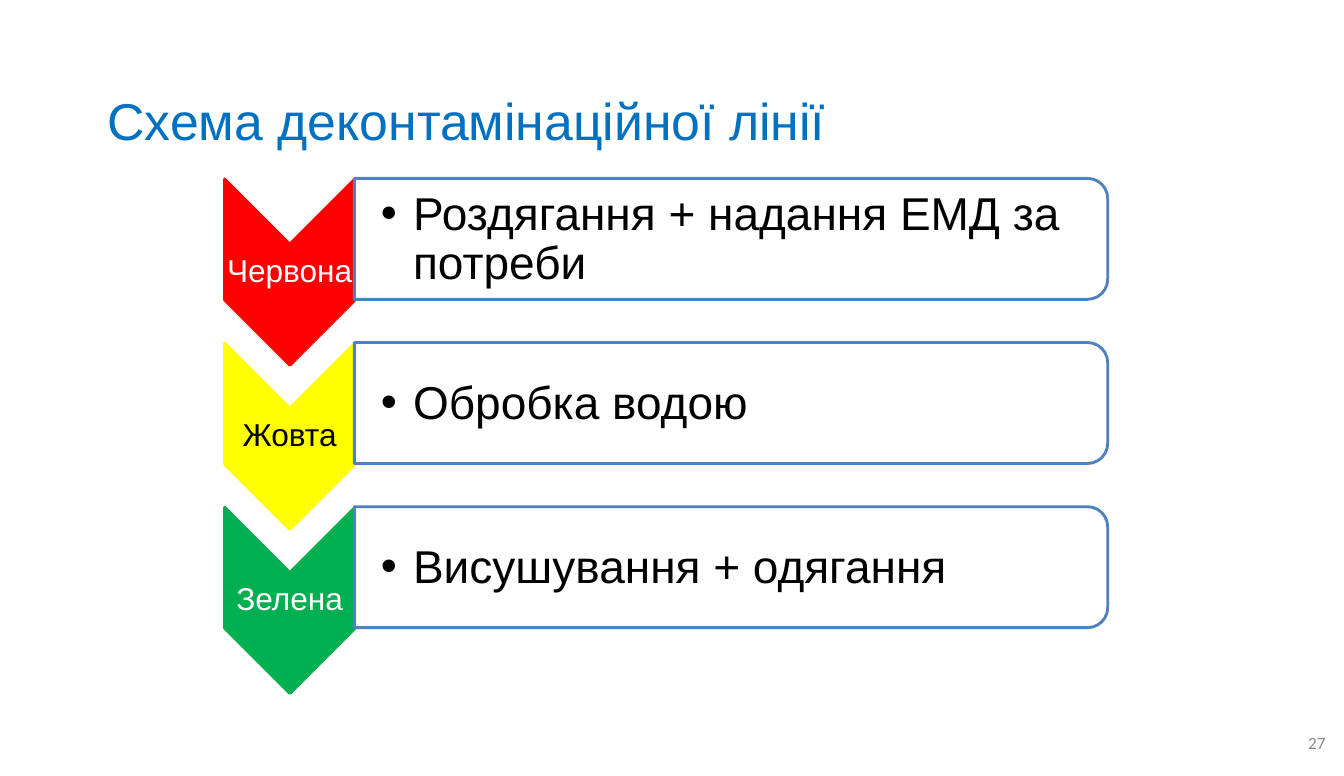
"""Build the slide on the decontamination line with its three zones."""
from typing import Any, NamedTuple

from lxml import etree
from pptx import Presentation
from pptx import util as u
from pptx.dml import color as col
from pptx.enum import shapes, text
from pptx.oxml import ns

PITCH = 4.03
BLUE, BLACK, WHITE, GREY = "4F81BD", "000000", "FFFFFF", "888888"


class Box(NamedTuple):
    left: float
    top: float
    width: float
    height: float

    def down(self, step: float) -> "Box":
        return self._replace(top=self.top + step)

    def cm(self) -> list[u.Length]:
        return [u.Cm(side) for side in self]


class Zone(NamedTuple):
    name: str
    fill: str
    ink: str
    task: str


ZONES = [
    Zone("Червона", "FF0000", WHITE, "Роздягання + надання ЕМД за потреби"),
    Zone("Жовта", "FFFF00", BLACK, "Обробка водою"),
    Zone("Зелена", "00B050", WHITE, "Висушування + одягання"),
]
TITLE = Box(2.39, 1.75, 28.93, 2.36)
NUMBER = Box(31.29, 17.73, 1.5, 0.99)
ARROW = Box(4.83, 5.08, 4.57, 3.2)
LABEL = Box(5.51, 5.99, 3.2, 1.37)
PANEL = Box(16.46, -3.38, 2.97, 18.49)
TASK = Box(8.71, 4.55, 18.36, 2.69)


def paint(target: Any, tone: str) -> None:
    target.rgb = col.RGBColor.from_string(tone)


def place(shape: Any, box: Box) -> None:
    shape.left, shape.top, shape.width, shape.height = box.cm()


def write(shape: Any, words: str, size: int, tone: str, align: Any,
          face: str = "Arial", pad: float = 0.05, wrap: bool = True) -> Any:
    frame = shape.text_frame
    frame.text = words
    frame.word_wrap = wrap
    frame.auto_size = text.MSO_AUTO_SIZE.NONE
    frame.vertical_anchor = text.MSO_ANCHOR.MIDDLE
    frame.margin_left = frame.margin_right = u.Cm(pad)
    frame.margin_top = frame.margin_bottom = u.Cm(pad / 2)
    para = frame.paragraphs[0]
    para.alignment = align
    para.space_before = u.Pt(0)
    for run in para.runs:
        run.font.size, run.font.name, run.font.bold = u.Pt(size), face, False
        paint(run.font.color, tone)
    return para


def bullet(para: Any) -> None:
    props = para._p.get_or_add_pPr()
    props.set("marL", str(u.Cm(0.79)))
    props.set("indent", str(-u.Cm(0.79)))
    tint = etree.SubElement(props, ns.qn("a:buClr"))
    etree.SubElement(tint, ns.qn("a:srgbClr"), val=BLACK)
    etree.SubElement(props, ns.qn("a:buFont"), typeface="Arial")
    etree.SubElement(props, ns.qn("a:buChar"), char="•")


def turned(slide: Any, kind: Any, box: Box, fill: str, line: str) -> Any:
    shape = slide.shapes.add_shape(kind, *box.cm())
    shape.rotation = 90
    shape.shadow.inherit = False
    shape.fill.solid()
    paint(shape.fill.fore_color, fill)
    paint(shape.line.color, line)
    shape.line.width = u.Pt(2)
    return shape


def draw(slide: Any, zone: Zone, step: float, body: Any) -> None:
    kinds = shapes.MSO_SHAPE
    turned(slide, kinds.CHEVRON, ARROW.down(step), zone.fill, zone.fill)
    label = slide.shapes.add_textbox(*LABEL.down(step).cm())
    para = write(label, zone.name, 22, zone.ink, text.PP_ALIGN.CENTER, wrap=False)
    para.line_spacing = 0.9
    panel = turned(slide, kinds.ROUND_2_SAME_RECTANGLE, PANEL.down(step), WHITE, BLUE)
    sheer = panel.fill._xPr.find(".//" + ns.qn("a:srgbClr"))
    etree.SubElement(sheer, ns.qn("a:alpha"), val="90000")
    place(body, TASK.down(step))
    para = write(body, zone.task, 32, BLACK, text.PP_ALIGN.LEFT)
    body.text_frame.margin_left = u.Cm(0.64)
    bullet(para)
    para.line_spacing = 0.9
    panel._element.addnext(body._element)


def main() -> None:
    deck = Presentation()
    deck.slide_width, deck.slide_height = u.Cm(32.99), u.Cm(19.05)
    slide = deck.slides.add_slide(deck.slide_layouts.get_by_name("Comparison"))
    title, *lists, spare = slide.placeholders
    spare._element.getparent().remove(spare._element)
    place(title, TITLE)
    write(title, "Схема деконтамінаційної лінії", 36, "0070C0",
          text.PP_ALIGN.JUSTIFY, pad=0.25)
    for row, (zone, body) in enumerate(zip(ZONES, lists)):
        draw(slide, zone, row * PITCH, body)
    number = slide.shapes.add_textbox(*NUMBER.cm())
    write(number, "27", 12, GREY, text.PP_ALIGN.RIGHT, "Calibri", 0.25)
    deck.save("out.pptx")


if __name__ == "__main__":
    main()
